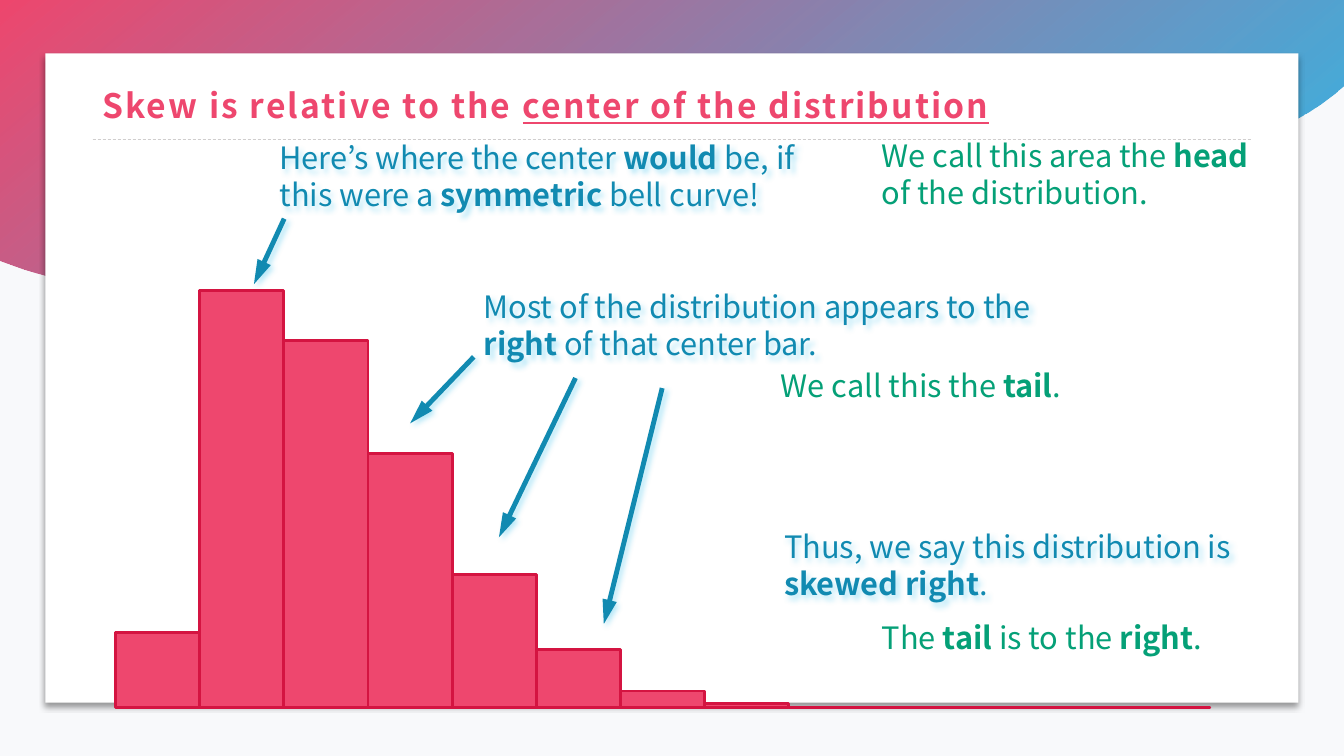
from dataclasses import dataclass

from lxml.etree import SubElement
from pptx import Presentation
from pptx.chart.data import CategoryChartData
from pptx.dml.color import RGBColor
from pptx.enum.chart import XL_CHART_TYPE
from pptx.enum.dml import MSO_LINE
from pptx.enum.shapes import MSO_CONNECTOR, MSO_SHAPE
from pptx.enum.text import MSO_ANCHOR, MSO_AUTO_SIZE
from pptx.oxml.ns import qn
from pptx.util import Pt


@dataclass(frozen=True)
class Theme:
    font: str = "Noto Sans CJK JP"
    title_size: int = 24
    note_size: int = 22
    chart_size: int = 10
    background: str = "F8F9FB"
    panel: str = "FFFFFF"
    rule: str = "D0CECE"
    pink: str = "EE476E"
    bar_edge: str = "D41441"
    sky: str = "16B3E8"
    blue: str = "118AB1"
    glow: str = "52C8EE"
    green: str = "05A077"
    black: str = "000000"


def rgb(value):
    return RGBColor.from_string(value)


def set_all(target, formats):
    for name, value in formats.items():
        setattr(target, name, value)


class SlideBuilder:
    def __init__(self, page, theme):
        self.page = page
        self.theme = theme
        fill = page.background.fill
        fill.solid()
        fill.fore_color.rgb = rgb(theme.background)

    def shadow(self, shape, color=None, angle=45):
        """Replace the theme effects with one shadow, or with none."""
        effects = SubElement(shape._element.spPr, qn("a:effectLst"))
        if color:
            outer = SubElement(effects, qn("a:outerShdw"), blurRad=str(Pt(4)), dist=str(Pt(3)),
                               dir=str(angle * 60000), algn="tl", rotWithShape="0")
            tint = SubElement(outer, qn("a:srgbClr"), val=color)
            SubElement(tint, qn("a:alpha"), val="40000")

    def wave(self, start, curves, height):
        """Draw a closed outline of cubic curves, each given as two handles and an end."""
        builder = self.page.shapes.build_freeform(Pt(start[0]), Pt(start[1]), scale=1.0)
        builder.add_line_segments([(Pt(x), Pt(y)) for *_, (x, y) in curves], close=True)
        shape = builder.convert_to_shape()
        shape.height = Pt(height)
        outline = shape._element.spPr.find(".//" + qn("a:path"))
        outline.set("h", str(Pt(height)))
        for segment, curve in zip(outline.findall(qn("a:lnTo")), curves):
            bend = SubElement(outline, qn("a:cubicBezTo"))
            for x, y in curve:
                SubElement(bend, qn("a:pt"), x=str(Pt(x)), y=str(Pt(y)))
            outline.replace(segment, bend)
        shape.fill.gradient()
        shape.fill.gradient_angle = 310
        for stop, color in zip(shape.fill.gradient_stops, (self.theme.pink, self.theme.sky)):
            stop.color.rgb = rgb(color)
        last_color = shape._element.spPr.findall(".//" + qn("a:srgbClr"))[-1]
        SubElement(last_color, qn("a:alpha"), val="90000")
        shape.line.fill.background()
        self.shadow(shape)

    def panel(self, left, top, width, height):
        shape = self.page.shapes.add_shape(MSO_SHAPE.RECTANGLE, Pt(left), Pt(top), Pt(width), Pt(height))
        shape.fill.solid()
        shape.fill.fore_color.rgb = rgb(self.theme.panel)
        shape.line.fill.background()
        self.shadow(shape, self.theme.black, 90)

    def line(self, start, end, color, width):
        connector = self.page.shapes.add_connector(
            MSO_CONNECTOR.STRAIGHT, *(Pt(value) for value in (*start, *end)))
        connector.line.color.rgb = rgb(color)
        connector.line.width = Pt(width)
        return connector

    def rule(self, start, end):
        connector = self.line(start, end, self.theme.rule, 0.5)
        connector.line.dash_style = MSO_LINE.DASH
        self.shadow(connector)

    def arrow(self, start, end):
        connector = self.line(start, end, self.theme.blue, 3.5)
        SubElement(connector.line._get_or_add_ln(), qn("a:tailEnd"), type="triangle", w="med", len="lg")
        self.shadow(connector, self.theme.glow)

    def text(self, left, top, width, height, words, size, color):
        """Add a text box; every second part between ** marks is a stressed span."""
        box = self.page.shapes.add_textbox(Pt(left), Pt(top), Pt(width), Pt(height))
        box.text_frame.word_wrap = True
        spans = []
        for index, part in enumerate(words.split("**")):
            if part:
                span = box.text_frame.paragraphs[0].add_run()
                span.text = part
                set_all(span.font, {"name": self.theme.font, "size": Pt(size), "bold": index % 2 == 1})
                span.font.color.rgb = rgb(color)
                spans.append(span)
        return box, spans

    def title(self, left, top, width, height, words):
        box, spans = self.text(left, top, width, height, words, self.theme.title_size, self.theme.pink)
        box.text_frame.vertical_anchor = MSO_ANCHOR.MIDDLE
        box.text_frame.paragraphs[0].line_spacing = 0.9
        for span in spans:
            set_all(span.font, {"underline": span.font.bold, "bold": True})
            span.font._element.set("spc", "150")

    def note(self, left, top, width, height, words, color):
        box, _ = self.text(left, top, width, height, words, self.theme.note_size, color)
        box.text_frame.auto_size = MSO_AUTO_SIZE.SHAPE_TO_FIT_TEXT
        if color == self.theme.blue:
            self.shadow(box, self.theme.glow)

    def histogram(self, left, top, width, height, values):
        data = CategoryChartData()
        data.categories = [str(number) for number in range(1, len(values) + 1)]
        data.add_series("Series 1", values)
        chart = self.page.shapes.add_chart(XL_CHART_TYPE.COLUMN_CLUSTERED, Pt(left), Pt(top),
                                           Pt(width), Pt(height), data).chart
        set_all(chart, {"has_legend": False, "has_title": False})
        set_all(chart.font, {"name": self.theme.font, "size": Pt(self.theme.chart_size)})
        chart.font.color.rgb = rgb(self.theme.black)
        chart.category_axis.visible = False
        set_all(chart.value_axis, {"visible": False, "has_major_gridlines": False,
                                   "minimum_scale": 0, "maximum_scale": 120})
        plot = chart.plots[0]
        set_all(plot, {"gap_width": 0, "overlap": -27, "vary_by_categories": False})
        bars = plot.series[0].format
        bars.fill.solid()
        bars.fill.fore_color.rgb = rgb(self.theme.pink)
        bars.line.color.rgb = rgb(self.theme.bar_edge)
        bars.line.width = Pt(2)

        area = chart._chartSpace.chart.plotArea
        for old in area.findall(qn("c:layout")):
            area.remove(old)
        layout = SubElement(area, qn("c:layout"))
        area.insert(0, layout)
        manual = SubElement(layout, qn("c:manualLayout"))
        for name, value in {"layoutTarget": "inner", "xMode": "edge", "yMode": "edge",
                            "x": 0.02, "y": 0.06, "w": 0.96, "h": 0.92}.items():
            SubElement(manual, qn("c:" + name), val=str(value))


def main():
    theme = Theme()
    deck = Presentation()
    set_all(deck, {"slide_width": Pt(960), "slide_height": Pt(540)})
    slide = SlideBuilder(deck.slides.add_slide(deck.slide_layouts[6]), theme)

    slide.wave((0, 0), [
        ((0, 185.8), (0, 185.8), (0, 185.8)),
        ((87.8, 218.9), (191.5, 223.9), (283, 197.3)),
        ((381.6, 169.2), (466.6, 108.7), (570.2, 97.9)),
        ((673.9, 87.1), (783.4, 129.6), (883.4, 102.2)),
        ((912.2, 94.3), (938.9, 79.9), (960, 61.2)),
        ((960, 0), (960, 0), (960, 0)),
    ], 223.9)
    slide.panel(32.5, 38.2, 895, 463.7)
    slide.rule((66.2, 99.4), (894.6, 99.4))
    slide.title(66.2, 53.6, 828, 46, "Skew is relative to the **center of the distribution**")
    slide.histogram(66.2, 124.6, 814.3, 388.8, (18, 100, 88, 61, 32, 14, 4, 1, 0, 0, 0, 0, 0))

    for left, top, width, height, words, color in (
        (192.6, 95.8, 411, 60.5,
         "Here’s where the center **would** be, if this were a **symmetric** bell curve!", theme.blue),
        (338.4, 202.3, 411, 60.5,
         "Most of the distribution appears to the **right** of that center bar.", theme.blue),
        (553, 373.7, 367.2, 60.5,
         "Thus, we say this distribution is **skewed right**.", theme.blue),
        (622.8, 94.3, 290.9, 60.5, "We call this area the **head** of the distribution.", theme.green),
        (550.8, 258.1, 264.2, 33.8, "We call this the **tail**.", theme.green),
        (622.8, 438.5, 277.9, 33.8, "The **tail** is to the **right**.", theme.green),
    ):
        slide.note(left, top, width, height, words, color)

    for start, end in (
        ((203, 156.2), (181.4, 203)),
        ((338.4, 254.9), (293, 302.4)),
        ((411.1, 270), (356.4, 383.8)),
        ((473, 277.2), (431.3, 445.7)),
    ):
        slide.arrow(start, end)

    deck.save("out.pptx")


if __name__ == "__main__":
    main()
